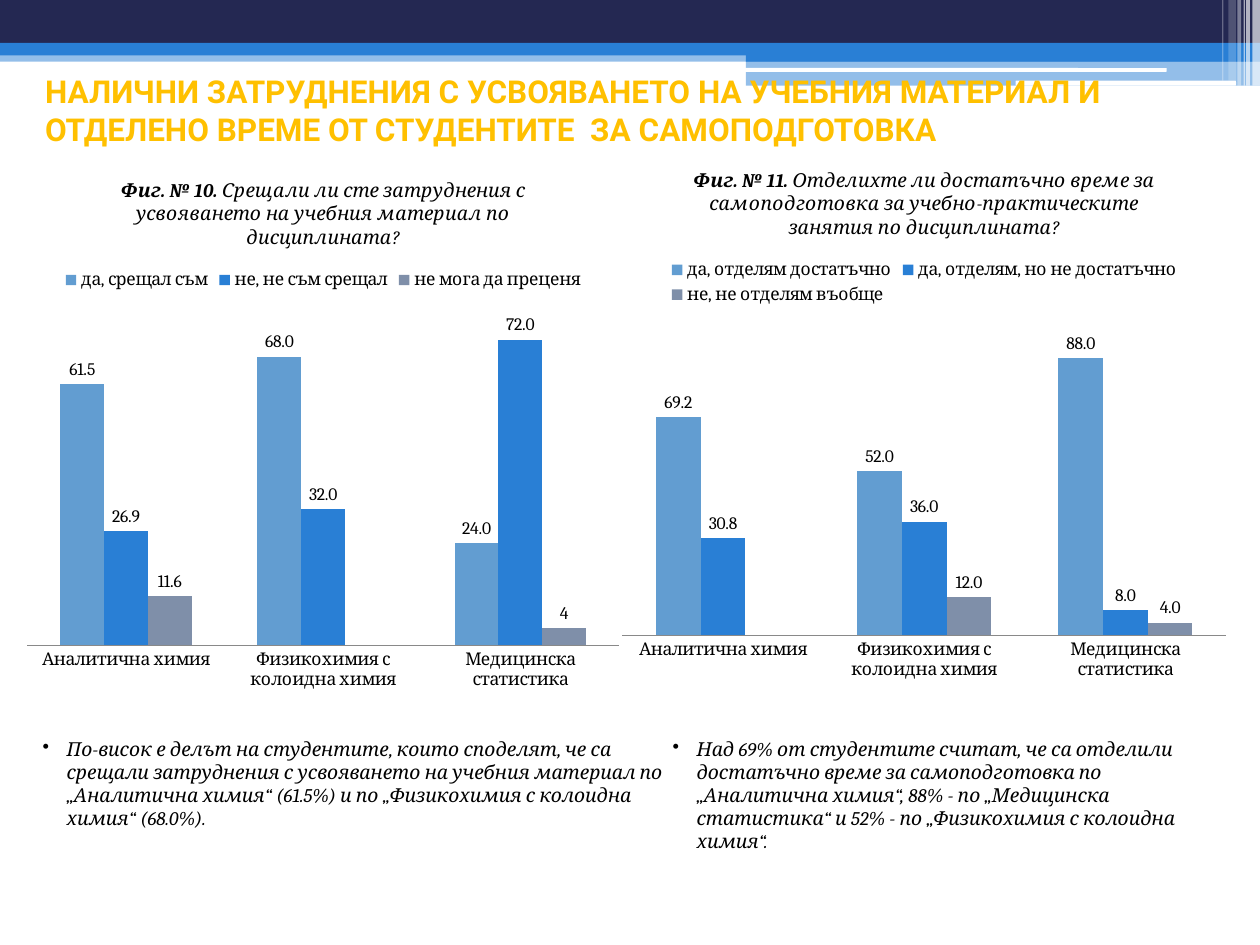
import pptx
import pptx.chart.data
import pptx.dml.color
import pptx.enum.chart
import pptx.enum.shapes
import pptx.enum.text
import pptx.oxml
import pptx.oxml.ns
import pptx.util
from pptx.util import Inches

THEME = {
    "navy": "242852", "blue": "297FD5", "white": "FFFFFF", "gold": "FFC000",
    "black": "000000", "axis": "898989",
    "series": ["629DD1", "297FD5", "7F8FA9"],
    "heading": {"name": "Roboto", "size": pptx.util.Pt(18), "bold": True},
    "body": {"name": "Cambria", "size": pptx.util.Pt(11), "italic": True},
    "chart": {"name": "Cambria", "size": pptx.util.Pt(10)},
}


def style_font(font, values, color):
    for name, value in values.items():
        setattr(font, name, value)
    font.color.rgb = pptx.dml.color.RGBColor.from_string(THEME[color])


def add_text(page, bounds, text, values, color):
    box = page.shapes.add_textbox(*map(Inches, bounds))
    box.text_frame.word_wrap = True
    para = box.text_frame.paragraphs[0]
    span = para.add_run()
    span.text = text
    style_font(span.font, values, color)
    return box, para


deck = pptx.Presentation()
deck.slide_width, deck.slide_height = Inches(10), Inches(7.5)
page = deck.slides.add_slide(deck.slide_layouts[6])

bands = [
    ("RECTANGLE", 0, 0.4, 10, 0.09, "blue", 50),
    ("RECTANGLE", 0, 0, 10, 0.34, "navy", 100),
    ("RECTANGLE", 0, 0.34, 10, 0.1, "blue", 100),
    ("RECTANGLE", 5.92, 0.39, 4.08, 0.1, "blue", 100),
    ("RECTANGLE", 5.92, 0.48, 4.08, 0.2, "blue", 50),
    ("ROUNDED_RECTANGLE", 5.91, 0.54, 3.35, 0.03, "white", 100),
    ("ROUNDED_RECTANGLE", 8.06, 0.64, 1.75, 0.04, "white", 100),
]
stripes = [
    (9.94, 0.06, 0.68, 65), (9.89, 0.03, 0.68, 65), (9.87, 0.01, 0.68, 60),
    (9.82, 0.03, 0.68, 40), (9.75, 0.06, 0.64, 20), (9.7, 0.01, 0.64, 30),
]
bands += [("RECTANGLE", left, 0, width, height, "white", opacity)
          for left, width, height, opacity in stripes]

for kind, left, top, width, height, color, opacity in bands:
    band = page.shapes.add_shape(
        pptx.enum.shapes.MSO_SHAPE[kind], *map(Inches, (left, top, width, height)))
    band.shadow.inherit = False
    band.line.fill.background()
    band.fill.solid()
    band.fill.fore_color.rgb = pptx.dml.color.RGBColor.from_string(THEME[color])
    if opacity < 100:
        tint = band.fill._xPr.find(".//" + pptx.oxml.ns.qn("a:srgbClr"))
        alpha = pptx.oxml.parse_xml(
            f'<a:alpha {pptx.oxml.ns.nsdecls("a")} val="{opacity * 1000}"/>')
        tint.append(alpha)

heading, para = add_text(
    page, (0.26, 0.52, 9.45, 0.71),
    "НАЛИЧНИ ЗАТРУДНЕНИЯ С УСВОЯВАНЕТО НА УЧЕБНИЯ МАТЕРИАЛ И "
    "ОТДЕЛЕНО ВРЕМЕ ОТ СТУДЕНТИТЕ  ЗА САМОПОДГОТОВКА",
    THEME["heading"], "gold")
heading.text_frame.vertical_anchor = pptx.enum.text.MSO_ANCHOR.MIDDLE

findings = [
    (0.24, 5.23, "По-висок е делът на студентите, които споделят, че са срещали "
     "затруднения с усвояването на учебния материал по „Аналитична химия“ (61.5%) "
     "и по „Физикохимия с колоидна химия“ (68.0%)."),
    (5.24, 4.57, "Над 69% от студентите считат, че са отделили достатъчно време за "
     "самоподготовка по „Аналитична химия“, 88% - по „Медицинска статистика“ "
     "и 52% - по „Физикохимия с колоидна химия“."),
]
for left, width, text in findings:
    box, para = add_text(page, (left, 5.8, width, 1.34), text, THEME["body"], "black")
    para.space_after = pptx.util.Pt(10)
    properties = para._p.get_or_add_pPr()
    properties.set("marL", str(Inches(0.19)))
    properties.set("indent", str(-Inches(0.19)))
    properties.append(pptx.oxml.parse_xml(
        f'<a:buChar {pptx.oxml.ns.nsdecls("a")} char="•"/>'))

categories = ["Аналитична химия", "Физикохимия с колоидна химия", "Медицинска статистика"]
figures = [
    {"bounds": (0.12, 1.23, 4.89, 4.33), "maximum": 80, "number": "Фиг. № 10.",
     "question": " Срещали ли сте затруднения с усвояването на учебния материал "
                 "по дисциплината?",
     "series": [("да, срещал съм", (61.5, 68, 24), "0.0"),
                ("не, не съм срещал", (26.9, 32, 72), "0.0"),
                ("не мога да преценя", (11.6, None, 4), "General")]},
    {"bounds": (4.84, 1.15, 4.99, 4.33), "maximum": 100, "number": "Фиг. № 11.",
     "question": " Отделихте ли достатъчно време за самоподготовка за "
                 "учебно-практическите занятия по дисциплината?",
     "series": [("да, отделям достатъчно", (69.2, 52, 88), "0.0"),
                ("да, отделям, но не достатъчно", (30.8, 36, 8), "0.0"),
                ("не, не отделям въобще", (None, 12, 4), "0.0")]},
]
for figure in figures:
    data = pptx.chart.data.CategoryChartData()
    data.categories = categories
    for name, values, number_format in figure["series"]:
        data.add_series(name, values, number_format)
    chart = page.shapes.add_chart(
        pptx.enum.chart.XL_CHART_TYPE.COLUMN_CLUSTERED,
        *map(Inches, figure["bounds"]), data).chart
    style_font(chart.font, THEME["chart"], "black")

    para = chart.chart_title.text_frame.paragraphs[0]
    for text, bold in ((figure["number"], True), (figure["question"], False)):
        span = para.add_run()
        span.text = text
        style_font(span.font, THEME["body"] | {"bold": bold}, "black")
    chart.chart_title.include_in_layout = False

    chart.has_legend = True
    chart.legend.position = pptx.enum.chart.XL_LEGEND_POSITION.TOP
    chart.legend.include_in_layout = False

    axis = chart.category_axis
    axis.major_tick_mark = pptx.enum.chart.XL_TICK_MARK.NONE
    axis.format.line.color.rgb = pptx.dml.color.RGBColor.from_string(THEME["axis"])
    scale = {"visible": False, "has_major_gridlines": False,
             "minimum_scale": 0, "maximum_scale": figure["maximum"]}
    for name, value in scale.items():
        setattr(chart.value_axis, name, value)

    plot = chart.plots[0]
    plot.gap_width, plot.overlap, plot.vary_by_categories = 150, 0, False
    for series, color, source in zip(plot.series, THEME["series"], figure["series"]):
        series.format.fill.solid()
        series.format.fill.fore_color.rgb = pptx.dml.color.RGBColor.from_string(color)
        label_format = {"show_value": True, "number_format": source[2],
                        "number_format_is_linked": False,
                        "position": pptx.enum.chart.XL_LABEL_POSITION.OUTSIDE_END}
        for name, value in label_format.items():
            setattr(series.data_labels, name, value)

deck.save("out.pptx")
